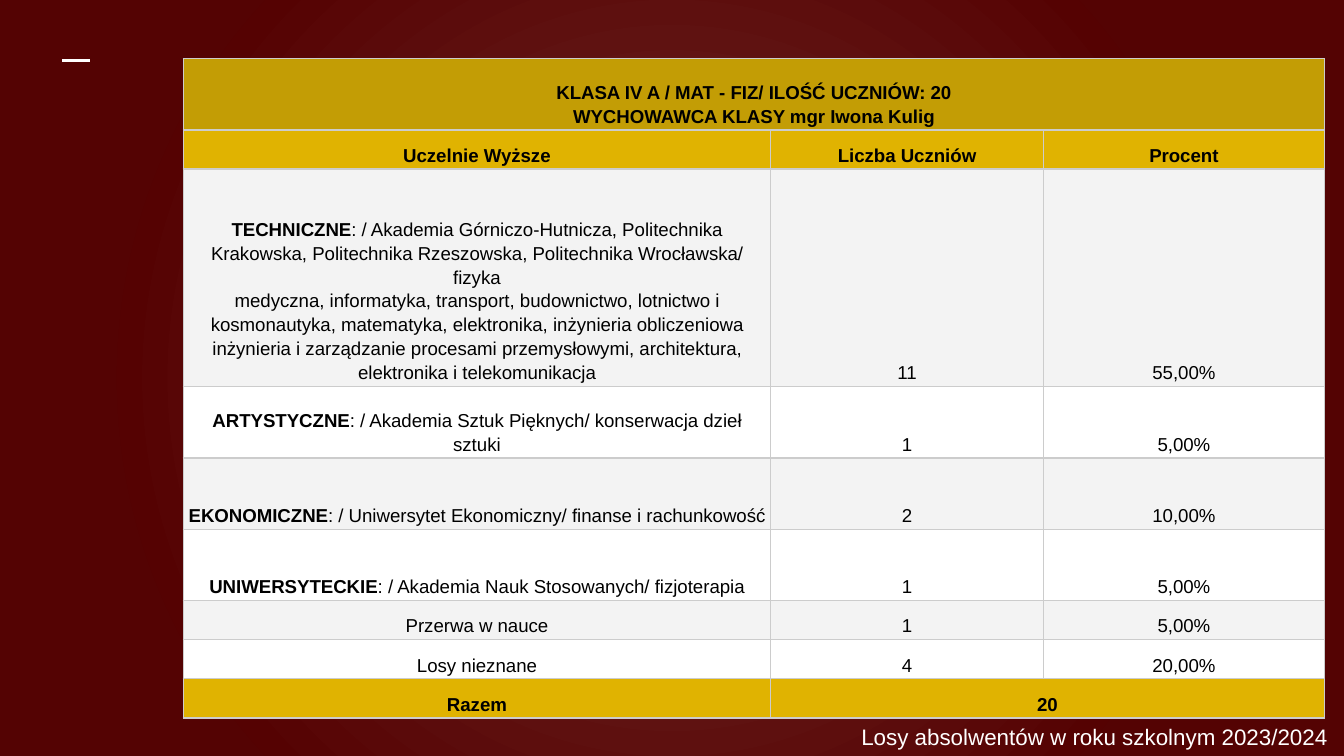
from lxml.etree import SubElement
from pptx import Presentation
from pptx.dml.color import RGBColor as RGB
from pptx.enum.shapes import MSO_CONNECTOR as Link
from pptx.enum.text import MSO_ANCHOR as Anchor, PP_ALIGN as Align
from pptx.oxml import parse_xml
from pptx.oxml.ns import nsdecls, qn
from pptx.util import Pt

WHITE = RGB(0xFF, 0xFF, 0xFF)
BLACK = RGB(0, 0, 0)
GREY = RGB(0xF3, 0xF3, 0xF3)
RULE = RGB(0xCC, 0xCC, 0xCC)
GOLD = RGB(0xE0, 0xB3, 0x01)
DARK = RGB(0xC3, 0x9D, 0x05)
GLOW = [(0, RGB(0x70, 0x2D, 0x2A)), (72, RGB(0x55, 0x02, 0x02)),
        (100, RGB(0x54, 0x03, 0x03))]

COLS = [314.6, 146.2, 150.5]
TALL, LOW = 38.2, 21
# Each row: height, fill, all bold, cell texts; a "|" ends the bold part.
ROWS = [
    (TALL, DARK, True, ["KLASA IV A / MAT - FIZ/ ILOŚĆ UCZNIÓW: 20\n"
                        "WYCHOWAWCA KLASY mgr Iwona Kulig"]),
    (LOW, GOLD, True, ["Uczelnie Wyższe", "Liczba Uczniów", "Procent"]),
    (116.6, GREY, False, [
        "TECHNICZNE|: / Akademia Górniczo-Hutnicza, Politechnika\n"
        "Krakowska, Politechnika Rzeszowska, Politechnika Wrocławska/ fizyka\n"
        "medyczna, informatyka, transport, budownictwo, lotnictwo i "
        "kosmonautyka, matematyka, elektronika, inżynieria obliczeniowa\n"
        "inżynieria i zarządzanie procesami przemysłowymi, architektura, "
        "elektronika i telekomunikacja", "11", "55,00%"]),
    (TALL, WHITE, False, [
        "ARTYSTYCZNE|: / Akademia Sztuk Pięknych/ konserwacja dzieł sztuki",
        "1", "5,00%"]),
    (TALL, GREY, False, [
        "EKONOMICZNE|: / Uniwersytet Ekonomiczny/ finanse i rachunkowość",
        "2", "10,00%"]),
    (TALL, WHITE, False, [
        "UNIWERSYTECKIE|: / Akademia Nauk Stosowanych/ fizjoterapia",
        "1", "5,00%"]),
    (LOW, GREY, False, ["Przerwa w nauce", "1", "5,00%"]),
    (LOW, WHITE, False, ["Losy nieznane", "4", "20,00%"]),
    (LOW, GOLD, True, ["Razem", "20"]),
]


class Deck:
    def __init__(self, wide, high, font):
        self.prs = Presentation()
        self.prs.slide_width, self.prs.slide_height = Pt(wide), Pt(high)
        self.font = font
        self.slide = self.prs.slides.add_slide(self.prs.slide_layouts[6])

    def glow(self, stops):
        """Fill the background with a gradient that spreads from the centre."""
        self.slide.background.fill.gradient()
        old = self.slide.element.xpath("p:cSld/p:bg/p:bgPr/a:gradFill")[0]
        marks = "".join(f'<a:gs pos="{pos * 1000}"><a:srgbClr val="{tint}"/></a:gs>'
                        for pos, tint in stops)
        new = parse_xml(
            f'<a:gradFill {nsdecls("a")}><a:gsLst>{marks}</a:gsLst>'
            '<a:path path="circle"><a:fillToRect l="50000" t="50000" '
            'r="50000" b="50000"/></a:path></a:gradFill>')
        old.getparent().replace(old, new)

    def line(self, x1, y1, x2, y2, tint, width):
        link = self.slide.shapes.add_connector(
            Link.STRAIGHT, Pt(x1), Pt(y1), Pt(x2), Pt(y2))
        link.line.color.rgb, link.line.width = tint, Pt(width)
        SubElement(link.element.spPr, qn("a:effectLst"))

    def style(self, para, size, tint):
        para.font.name, para.font.size = self.font, Pt(size)
        para.font.color.rgb = tint

    def text(self, x, y, wide, high, words, size, tint, inset):
        frame = self.slide.shapes.add_textbox(
            Pt(x), Pt(y), Pt(wide), Pt(high)).text_frame
        frame.word_wrap = True
        frame.margin_left = frame.margin_right = Pt(inset)
        frame.margin_top = frame.margin_bottom = Pt(inset)
        frame.text = words
        self.style(frame.paragraphs[0], size, tint)

    def border(self, cell, tint, width):
        props = cell._tc.get_or_add_tcPr()
        for side in "LRTB":
            edge = SubElement(props, qn(f"a:ln{side}"), w=str(Pt(width)))
            fill = SubElement(edge, qn("a:solidFill"))
            SubElement(fill, qn("a:srgbClr"), val=str(tint))

    def label(self, cell, words, bold):
        cell.vertical_anchor = Anchor.BOTTOM
        cell.margin_left = cell.margin_right = Pt(2)
        cell.margin_top = cell.margin_bottom = Pt(1.5)
        frame = cell.text_frame
        for n, part in enumerate(words.split("\n")):
            para = frame.add_paragraph() if n else frame.paragraphs[0]
            para.alignment, para.line_spacing = Align.CENTER, 1.15
            self.style(para, 10, BLACK)
            para.font.bold = bold
            head, mark, tail = part.partition("|")
            run = para.add_run()
            run.text, run.font.bold = head, bold or bool(mark)
            if mark:
                rest = para.add_run()
                rest.text, rest.font.bold = tail, False

    def table(self, x, y, cols, rows):
        high = sum(row[0] for row in rows)
        grid = self.slide.shapes.add_table(
            len(rows), len(cols), Pt(x), Pt(y), Pt(sum(cols)), Pt(high)).table
        grid.first_row = grid.horz_banding = False
        for col, wide in zip(grid.columns, cols):
            col.width = Pt(wide)
        for r, (tall, tint, bold, texts) in enumerate(rows):
            grid.rows[r].height = Pt(tall)
            for c in range(len(cols)):
                cell = grid.cell(r, c)
                self.border(cell, RULE, 0.75)
                cell.fill.solid()
                cell.fill.fore_color.rgb = tint
                if c < len(texts):
                    self.label(cell, texts[c], bold)
            if len(texts) < len(cols):
                grid.cell(r, len(texts) - 1).merge(grid.cell(r, len(cols) - 1))


def main():
    deck = Deck(720, 405, "Arial")
    deck.glow(GLOW)
    deck.line(33.5, 32.5, 48, 32.5, WHITE, 1.5)
    deck.table(98.2, 31.4, COLS, ROWS)
    deck.text(454.3, 380.2, 265.7, 27.4,
              "Losy absolwentów w roku szkolnym 2023/2024", 12, WHITE, 7.2)
    deck.prs.save("out.pptx")


if __name__ == "__main__":
    main()
